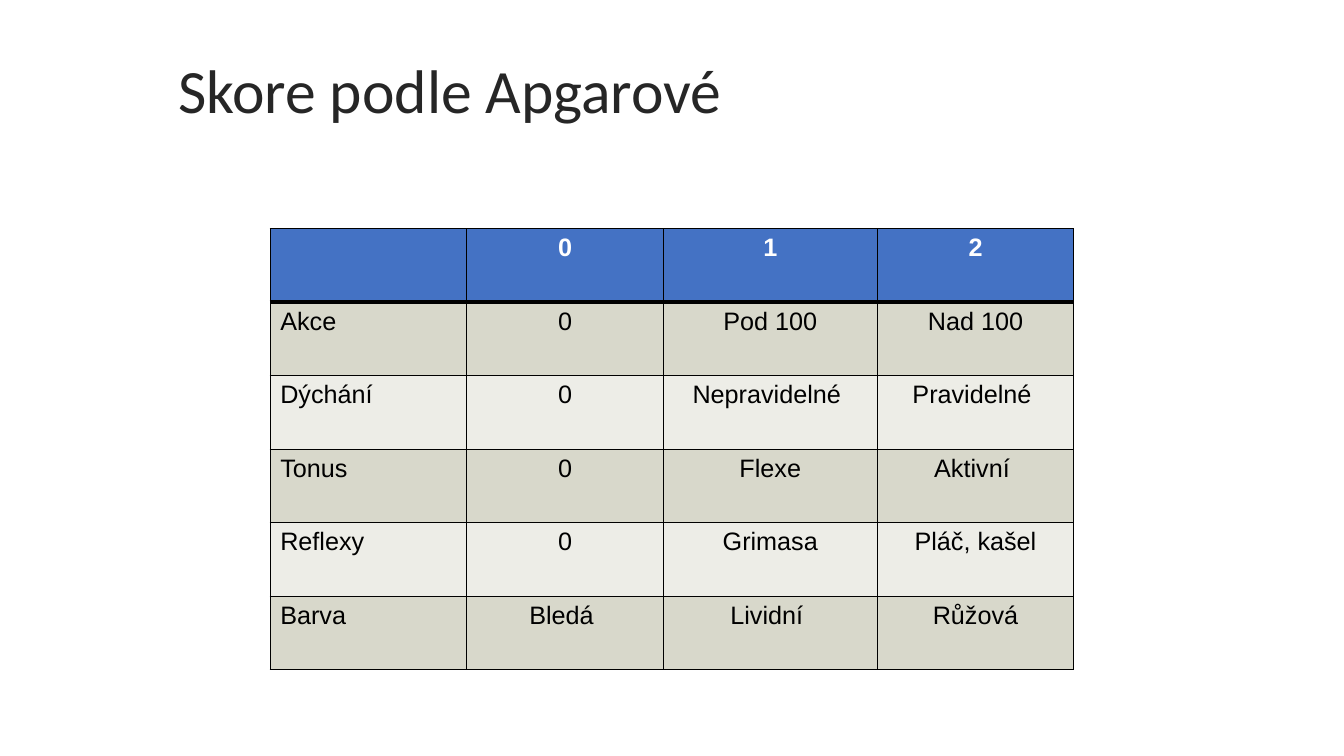
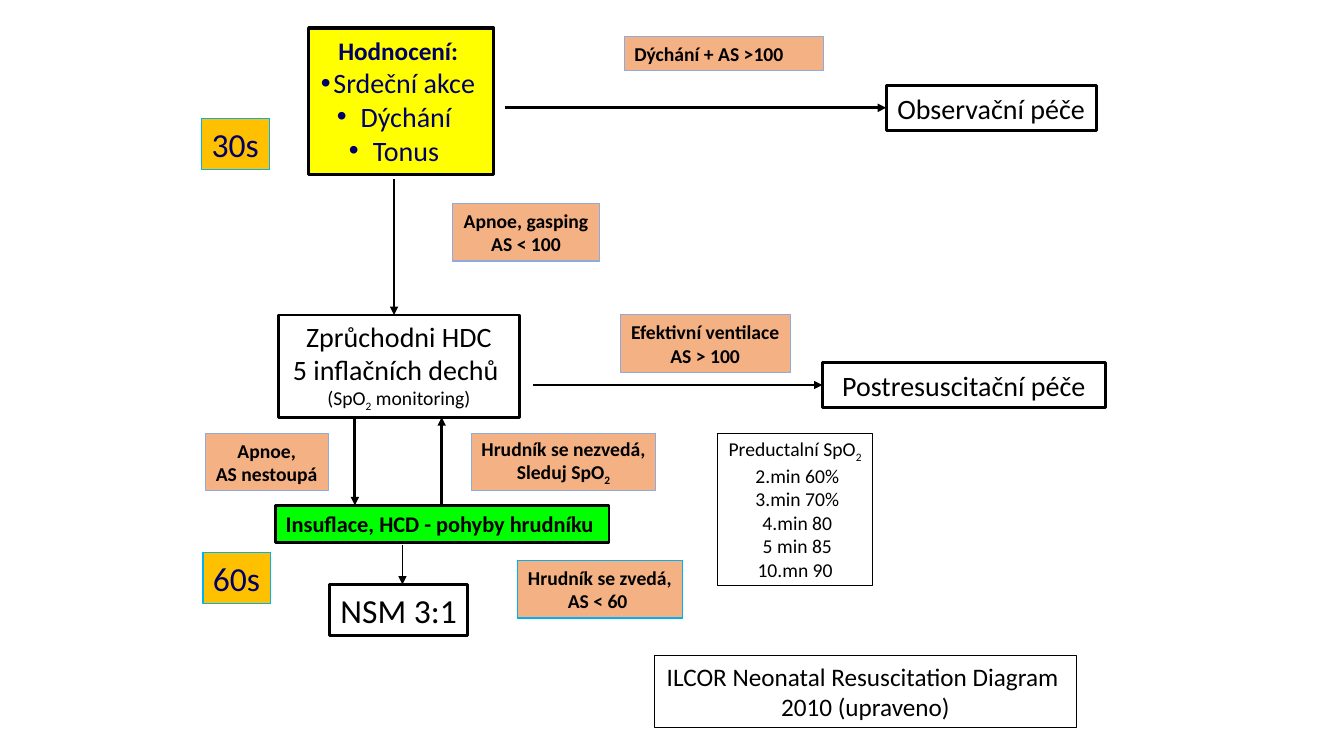
"""Build two slides on newborn scoring and resuscitation."""
import pptx
import pptx.util
import pptx.dml.color
import pptx.enum.shapes
import pptx.enum.text
import pptx.oxml.ns
from lxml import etree

Pt = pptx.util.Pt
qn = pptx.oxml.ns.qn
LEFT = pptx.enum.text.PP_ALIGN.LEFT
MID = pptx.enum.text.PP_ALIGN.CENTER
BLACK, NAVY, WHITE = "000000", "000066", "FFFFFF"
FONT = "Calibri"


def hue(code):
    return pptx.dml.color.RGBColor.from_string(code)


def ink(para, size, tint, bold=False, face=FONT, align=LEFT):
    para.alignment = align
    for run in para.runs:
        run.font.size = Pt(size)
        run.font.name = face
        run.font.bold = bold
        run.font.color.rgb = hue(tint)


deck = pptx.Presentation()
deck.slide_width, deck.slide_height = Pt(960), Pt(540)

slide = deck.slides.add_slide(deck.slide_layouts[5])
title = slide.shapes.title
title.left, title.top, title.width, title.height = Pt(120), Pt(37), Pt(612), Pt(60)
title.text_frame.text = "Skore podle Apgarové"
title.text_frame.vertical_anchor = pptx.enum.text.MSO_ANCHOR.MIDDLE
title.text_frame.paragraphs[0].line_spacing = 0.9
ink(title.text_frame.paragraphs[0], 44, "262626")

score = [
    ["", "0", "1", "2"],
    ["Akce", "0", "Pod 100", "Nad 100"],
    ["Dýchání", "0", "Nepravidelné ", "Pravidelné "],
    ["Tonus", "0", "Flexe", "Aktivní "],
    ["Reflexy", "0", "Grimasa", "Pláč, kašel"],
    ["Barva", "Bledá ", "Lividní ", "Růžová"],
]
wide = [140.4, 140.4, 152.8, 140.4]
high = 52.5
grid = slide.shapes.add_table(len(score), len(wide), Pt(193), Pt(163.4),
                              Pt(sum(wide)), Pt(high * len(score))).table
for col, width in zip(grid.columns, wide):
    col.width = Pt(width)
for i, words in enumerate(score):
    grid.rows[i].height = Pt(high)
    for j, word in enumerate(words):
        cell = grid.cell(i, j)
        cell.text_frame.text = word
        ink(cell.text_frame.paragraphs[0], 18, BLACK if i else WHITE,
            i == 0, "Arial", MID if j else LEFT)
        for side in "LRTB":
            thick = (side, i) in (("B", 0), ("T", 1))
            edge = etree.SubElement(cell._tc.get_or_add_tcPr(), qn("a:ln" + side),
                                    w=str(Pt(3 if thick else 1)))
            fill = etree.SubElement(edge, qn("a:solidFill"))
            etree.SubElement(fill, qn("a:srgbClr"), val=BLACK)
        cell.fill.solid()
        cell.fill.fore_color.rgb = hue(
            "4472C4" if i == 0 else "D8D8CB" if i % 2 else "EDEDE7")

slide = deck.slides.add_slide(deck.slide_layouts[6])
looks = {
    "start": ("FFFF00", BLACK, 2.5, 20, NAVY, False),
    "time": ("FFC000", "00B0F0", 0.75, 24, NAVY, False),
    "note": ("F4B183", "8FAADC", 0.75, 14, BLACK, True),
    "last": ("F4B183", "00B0F0", 0.75, 14, BLACK, True),
    "step": (None, BLACK, 2, 20, BLACK, False),
    "end": (None, BLACK, 2, 24, BLACK, False),
    "air": ("00FF00", BLACK, 2, 16, BLACK, True),
    "list": (None, BLACK, 0.75, 14, BLACK, False),
    "cite": (None, BLACK, 0.75, 18, BLACK, False),
}
items = [
    ("start", 220.5, 20, 132, 104.5, MID, "Hodnocení: \nSrdeční akce \nDýchání\nTonus"),
    ("note", 446, 26, 142, 24.5, LEFT, "Dýchání + AS >100"),
    ("step", 633, 61, 150, 32, MID, "Observační péče"),
    ("note", 323.5, 145.5, 104.5, 41, MID, "Apnoe, gasping\nAS < 100"),
    ("step", 199, 225, 172, 73, MID,
     "Zprůchodni HDC\n5 inflačních dechů \n(SpO_2_ monitoring)"),
    ("step", 587.5, 259, 202, 32, MID, "Postresuscitační péče"),
    ("note", 443, 225, 121.5, 41, MID, "Efektivní ventilace\nAS > 100"),
    ("cite", 467.5, 468.5, 301.5, 51, MID,
     "ILCOR Neonatal Resuscitation Diagram \n2010 (upraveno)"),
    ("time", 144, 84.5, 48.5, 36.5, LEFT, "30s"),
    ("note", 146.5, 309.5, 88, 41, MID, "Apnoe,\nAS nestoupá"),
    ("air", 197, 361, 238, 26.5, LEFT, "Insuflace, HCD - pohyby hrudníku"),
    ("last", 369.5, 400.5, 118, 41, MID, "Hrudník se zvedá,\nAS < 60 "),
    ("end", 235.5, 417.5, 98.5, 36.5, MID, "NSM 3:1"),
    ("note", 336.5, 309.5, 132, 41, MID, "Hrudník se nezvedá,\nSleduj SpO_2"),
    ("list", 512.5, 309.5, 111, 108.5, MID,
     "Preductalní SpO_2\n 2.min 60%\n 3.min 70%\n 4.min 80\n 5 min 85\n10.mn 90"),
    ("time", 145, 394.5, 48.5, 36.5, LEFT, "60s"),
]
boxes = {}
for look, x, y, width, height, align, text in items:
    back, edge, thick, size, tint, bold = looks[look]
    box = slide.shapes.add_shape(pptx.enum.shapes.MSO_SHAPE.RECTANGLE,
                                 Pt(x), Pt(y), Pt(width), Pt(height))
    boxes[text] = box
    box.shadow.inherit = False
    if back:
        box.fill.solid()
        box.fill.fore_color.rgb = hue(back)
    else:
        box.fill.background()
    box.line.color.rgb = hue(edge)
    box.line.width = Pt(thick)
    frame = box.text_frame
    frame.word_wrap = True
    frame.margin_left = Pt(7.2 if align == LEFT else 0)
    frame.margin_right = 0
    frame.text = text
    for para in frame.paragraphs:
        parts = para.text.split("_")
        para.text = parts[0]
        for k, part in enumerate(parts[1:]):
            run = para.add_run()
            run.text = part
            if k == 0:
                run._r.get_or_add_rPr().set("baseline", "-25000")
        small = parts[0].startswith("(")
        ink(para, 14 if small else size, tint, bold, FONT, align)

head, *points = boxes[items[0][-1]].text_frame.paragraphs
ink(head, 18, NAVY, True, FONT, MID)
for para, (left, right) in zip(points, [(9, 0), (17, 10), (17, 10)]):
    props = para._p.get_or_add_pPr()
    props.set("marL", str(Pt(left)))
    props.set("marR", str(Pt(right)))
    props.set("indent", str(Pt(-left)))
    etree.SubElement(props, qn("a:buFont"), typeface="Arial")
    etree.SubElement(props, qn("a:buChar"), char="•")

arrows = [
    (361, 77, 633, 77, 2, "Observační péče"),
    (381, 275, 587.5, 275, 2, "Postresuscitační péče"),
    (281.5, 128, 281.5, 225, 2, None),
    (315.5, 361, 315.5, 298, 2, None),
    (253.5, 298, 253.5, 361, 2, None),
    (287.5, 389, 287.5, 417.5, 1.25, None),
]
for x, y, right, low, thick, goal in arrows:
    line = slide.shapes.add_connector(pptx.enum.shapes.MSO_CONNECTOR.STRAIGHT,
                                      Pt(x), Pt(y), Pt(right), Pt(low))
    line.line.color.rgb = hue(BLACK)
    line.line.width = Pt(thick)
    props = line.element.spPr
    etree.SubElement(props.find(qn("a:ln")), qn("a:tailEnd"), type="triangle")
    etree.SubElement(props, qn("a:effectLst"))
    if goal:
        line.end_connect(boxes[goal], 1)

deck.save("out.pptx")
